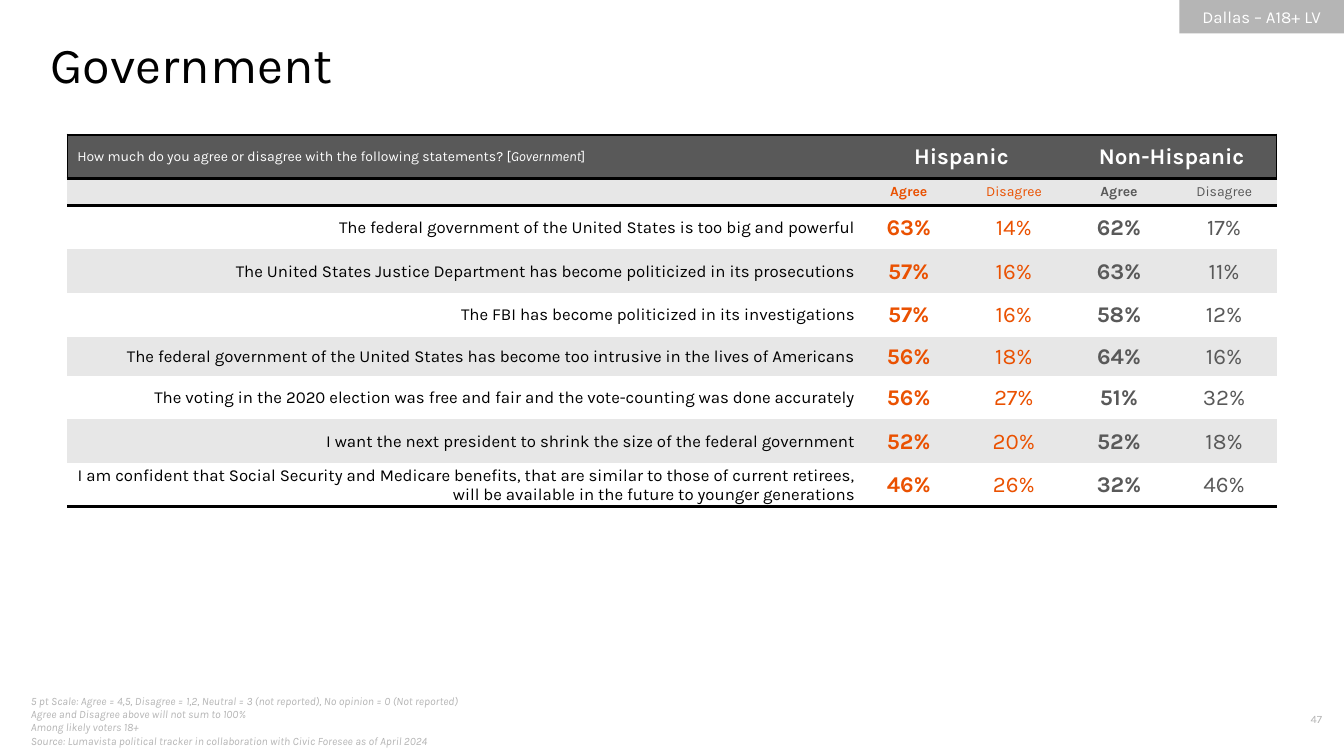
from dataclasses import dataclass

import pptx
import pptx.dml.color
import pptx.enum.shapes
import pptx.enum.text
import pptx.oxml
import pptx.oxml.ns
import pptx.util

Pt = pptx.util.Pt
ALIGN = pptx.enum.text.PP_ALIGN
ANCHOR = pptx.enum.text.MSO_ANCHOR


@dataclass(frozen=True)
class Theme:
    font: str = "Karla"
    black: str = "000000"
    white: str = "FFFFFF"
    band: str = "E7E7E7"
    dark: str = "595959"
    pale: str = "B5B5B5"
    orange: str = "EA5101"
    title_size: int = 36
    figure_size: int = 16
    body_size: int = 12
    label_size: int = 10
    note_size: int = 8


theme = Theme()


def style(paragraph, size, color, align=ALIGN.LEFT, bold=False, italic=False):
    paragraph.alignment = align
    font = paragraph.font
    font.name, font.size, font.bold, font.italic = theme.font, Pt(size), bold, italic
    font.color.rgb = pptx.dml.color.RGBColor.from_string(color)


def finish_cell(cell, fill, borders):
    """Draw the borders, a dict of side (L, R, T, B) to width in points, then the fill."""
    cell.vertical_anchor = ANCHOR.MIDDLE
    properties = cell._tc.get_or_add_tcPr()
    for side in "LRTB":
        if side in borders:
            properties.append(pptx.oxml.parse_xml(
                f'<a:ln{side} {pptx.oxml.ns.nsdecls("a")} w="{Pt(borders[side])}">'
                f'<a:solidFill><a:srgbClr val="{theme.black}"/></a:solidFill></a:ln{side}>'))
    cell.fill.solid()
    cell.fill.fore_color.rgb = pptx.dml.color.RGBColor.from_string(fill)


deck = pptx.Presentation()
deck.slide_width, deck.slide_height = Pt(960), Pt(540)
slide = deck.slides.add_slide(deck.slide_layouts[6])

# Footnotes and page number
footnotes = slide.shapes.add_textbox(Pt(15), Pt(500.4), Pt(368), Pt(28.8)).text_frame
footnotes.word_wrap = True
footnotes.vertical_anchor = ANCHOR.MIDDLE
footnotes.text = """5 pt Scale: Agree = 4,5, Disagree = 1,2, Neutral = 3 (not reported), No opinion = 0 (Not reported)
Agree and Disagree above will not sum to 100%
Among likely voters 18+
Source: Lumavista political tracker in collaboration with Civic Foresee as of April 2024"""
for note in footnotes.paragraphs:
    style(note, theme.note_size, theme.pale, italic=True)

page_number = slide.shapes.add_textbox(Pt(888), Pt(505.4), Pt(63.4), Pt(19.4)).text_frame
page_number.word_wrap = True
page_number.text = "47"
style(page_number.paragraphs[0], theme.note_size, theme.pale, ALIGN.RIGHT)

# Audience tag and title
audience = slide.shapes.add_shape(
    pptx.enum.shapes.MSO_SHAPE.RECTANGLE, Pt(842.4), Pt(0), Pt(117.6), Pt(23.8))
audience.shadow.inherit = False
audience.fill.solid()
audience.fill.fore_color.rgb = pptx.dml.color.RGBColor.from_string(theme.pale)
audience.line.fill.background()
audience.text_frame.vertical_anchor = ANCHOR.MIDDLE
audience.text_frame.text = "Dallas – A18+ LV"
style(audience.text_frame.paragraphs[0], theme.body_size, theme.white, ALIGN.CENTER)

title = slide.shapes.add_textbox(Pt(36), Pt(24), Pt(864), Pt(44)).text_frame
title.word_wrap = True
title.margin_left = title.margin_right = title.margin_top = title.margin_bottom = 0
title.text = "Government"
style(title.paragraphs[0], theme.title_size, theme.black)

# Agreement table
statements = [
    ("The federal government of the United States is too big and powerful",
     "63%", "14%", "62%", "17%"),
    ("The United States Justice Department has become politicized in its prosecutions",
     "57%", "16%", "63%", "11%"),
    ("The FBI has become politicized in its investigations",
     "57%", "16%", "58%", "12%"),
    ("The federal government of the United States has become too intrusive in the lives of Americans",
     "56%", "18%", "64%", "16%"),
    ("The voting in the 2020 election was free and fair and the vote-counting was done accurately",
     "56%", "27%", "51%", "32%"),
    ("I want the next president to shrink the size of the federal government",
     "52%", "20%", "52%", "18%"),
    ("I am confident that Social Security and Medicare benefits, that are similar to those of "
     "current retirees, will be available in the future to younger generations",
     "46%", "26%", "32%", "46%"),
]
answers = ("", "Agree", "Disagree", "Agree", "Disagree")
column_colors = (theme.black, theme.orange, theme.orange, theme.dark, theme.dark)
row_heights = [31.2, 18.6] + [31.2] * 3 + [28] + [31.2] * 3
rule = 2.25

table = slide.shapes.add_table(
    len(row_heights), len(answers), Pt(48), Pt(96.5), Pt(864), Pt(sum(row_heights))).table
table.first_row = table.horz_banding = False
no_grid_style = "{2D5ABB26-0587-4C30-8999-92F81FD0307C}"
table._tbl.tblPr.find(pptx.oxml.ns.qn("a:tableStyleId")).text = no_grid_style
for column, width in zip(table.columns, [563.6] + [75.1] * 4):
    column.width = Pt(width)
for row, height in zip(table.rows, row_heights):
    row.height = Pt(height)

question = table.cell(0, 0).text_frame.paragraphs[0]
for words in ("How much do you agree or disagree with the following statements? [", "Government", "]"):
    run = question.add_run()
    run.text = words
    if words == "Government":
        run.font.italic = True
style(question, theme.label_size, theme.white)
for first, group in ((1, "Hispanic"), (3, "Non-Hispanic")):
    table.cell(0, first).merge(table.cell(0, first + 1))
    table.cell(0, first).text = group
    style(table.cell(0, first).text_frame.paragraphs[0],
          theme.figure_size, theme.white, ALIGN.CENTER, bold=True)
for c in range(len(answers)):
    edges = {"T": rule, "B": rule}
    if c == 0:
        edges["L"] = 1
    if c >= 3:
        edges["R"] = 1
    finish_cell(table.cell(0, c), theme.dark, edges)

for r, entries in enumerate([answers] + statements, start=1):
    for c, entry in enumerate(entries):
        cell = table.cell(r, c)
        cell.text = entry
        if r == 1:
            size, edges = theme.label_size, {"T": rule}
        else:
            size = theme.figure_size if c else theme.body_size
            edges = {"B": rule} if r == len(statements) + 1 else {}
            cell.margin_left = cell.margin_right = cell.margin_top = Pt(0.75)
            cell.margin_bottom = 0
        style(cell.text_frame.paragraphs[0], size, column_colors[c],
              ALIGN.CENTER if c else ALIGN.RIGHT, bold=entries is not None and c in (1, 3))
        finish_cell(cell, theme.band if r % 2 else theme.white, edges)

deck.save("out.pptx")
